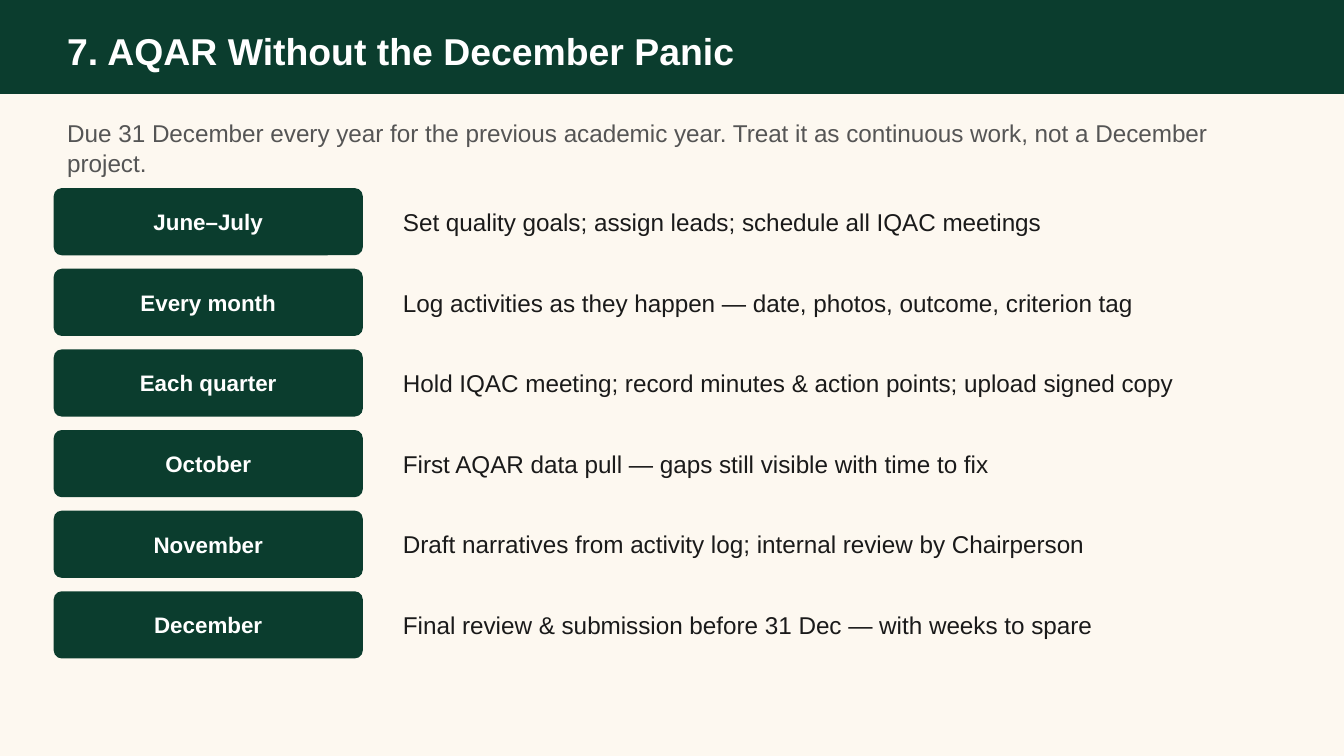
from dataclasses import dataclass

from lxml import etree
from pptx import Presentation
from pptx.dml.color import RGBColor
from pptx.enum.shapes import MSO_SHAPE
from pptx.enum.text import MSO_ANCHOR, MSO_AUTO_SIZE, PP_ALIGN
from pptx.oxml.ns import qn
from pptx.util import Inches, Pt

RECTANGLE = MSO_SHAPE.RECTANGLE
ROUNDED = MSO_SHAPE.ROUNDED_RECTANGLE
MIDDLE = MSO_ANCHOR.MIDDLE
NO_AUTOFIT = MSO_AUTO_SIZE.NONE
LEFT, CENTER = PP_ALIGN.LEFT, PP_ALIGN.CENTER

GRID = Inches(0.1)  # one column or row; the slide is 100 columns wide
TITLE_AND_CONTENT = 1


@dataclass(frozen=True)
class Theme:
    green: RGBColor = RGBColor.from_string("0B3D2E")
    cream: RGBColor = RGBColor.from_string("FDF8F0")
    white: RGBColor = RGBColor.from_string("FFFFFF")
    grey: RGBColor = RGBColor.from_string("555555")
    ink: RGBColor = RGBColor.from_string("1A1A1A")
    font: str = "Arial"
    title_size: int = 20
    body_size: int = 13
    label_size: int = 12


THEME = Theme()
TITLE_FORMAT = {"size": Pt(THEME.title_size), "bold": True, "color": THEME.white}
INTRO_FORMAT = {"size": Pt(THEME.body_size), "bold": False, "color": THEME.grey}
LABEL_FORMAT = {"size": Pt(THEME.label_size), "bold": True, "color": THEME.white}
TASK_FORMAT = {"size": Pt(THEME.body_size), "bold": False, "color": THEME.ink}

TITLE = "7. AQAR Without the December Panic"
INTRO = ("Due 31 December every year for the previous academic year. "
         "Treat it as continuous work, not a December project.")
CALENDAR = [
    ("June–July", "Set quality goals; assign leads; schedule all IQAC meetings"),
    ("Every month", "Log activities as they happen — date, photos, outcome, criterion tag"),
    ("Each quarter", "Hold IQAC meeting; record minutes & action points; upload signed copy"),
    ("October", "First AQAR data pull — gaps still visible with time to fix"),
    ("November", "Draft narratives from activity log; internal review by Chairperson"),
    ("December", "Final review & submission before 31 Dec — with weeks to spare"),
]


def on_grid(*cells):
    """Turn columns and rows into lengths."""
    return [int(cell * GRID) for cell in cells]


def write(shape, text, text_format, alignment=LEFT):
    """Put one formatted paragraph, vertically centred, in a shape."""
    frame = shape.text_frame
    frame.text = text
    frame_format = {"word_wrap": True, "auto_size": NO_AUTOFIT, "vertical_anchor": MIDDLE}
    for name, value in frame_format.items():
        setattr(frame, name, value)
    paragraph = frame.paragraphs[0]
    paragraph.alignment = alignment
    paragraph.space_before = Pt(0)
    font = paragraph.runs[0].font
    font.name = THEME.font
    font.color.rgb = text_format["color"]
    for name in ("size", "bold"):
        setattr(font, name, text_format[name])


def fill_placeholder(placeholder, box, text, text_format):
    """Move a template placeholder to its box and write in it."""
    sides = ("left", "top", "width", "height")
    for side, length in zip(sides, on_grid(*box)):
        setattr(placeholder, side, length)
    write(placeholder, text, text_format)


def add_panel(slide, preset, box):
    """Add a plain green shape."""
    panel = slide.shapes.add_shape(preset, *on_grid(*box))
    panel.shadow.inherit = False
    panel.fill.solid()
    panel.fill.fore_color.rgb = THEME.green
    panel.line.fill.background()
    return panel


def add_header(slide, box):
    """Green band with the slide title on it."""
    left, top, width, height = box
    band = add_panel(slide, RECTANGLE, box)
    slide.shapes.title.element.addprevious(band.element)  # behind the title
    title_box = (left + 4, top + 1.8, width - 10, height - 3)
    fill_placeholder(slide.shapes.title, title_box, TITLE, TITLE_FORMAT)


def add_intro(slide, box):
    """Unbulleted lead sentence in the body placeholder."""
    body = slide.placeholders[1]
    fill_placeholder(body, box, INTRO, INTRO_FORMAT)
    properties = body.text_frame.paragraphs[0]._p.get_or_add_pPr()
    properties.set("marL", "0")
    properties.set("indent", "0")
    etree.SubElement(properties, qn("a:buNone"))


def add_calendar(slide, box):
    """One row per period: a label pill and its task."""
    left, top, width, height = box
    pill_width, column_gap, row_gap = 23, 2, 1
    pitch = (height + row_gap) / len(CALENDAR)
    row_height = pitch - row_gap
    task_left = left + pill_width + column_gap
    task_width = width - pill_width - column_gap
    for row, (period, task) in enumerate(CALENDAR):
        row_top = top + row * pitch
        pill = add_panel(slide, ROUNDED, (left, row_top, pill_width, row_height))
        pill.adjustments[0] = 0.12
        write(pill, period, LABEL_FORMAT, CENTER)
        task_box = on_grid(task_left, row_top, task_width, row_height)
        write(slide.shapes.add_textbox(*task_box), task, TASK_FORMAT)


def main():
    presentation = Presentation()
    presentation.slide_width = 100 * GRID
    presentation.slide_height = presentation.slide_width * 9 // 16
    slide = presentation.slides.add_slide(presentation.slide_layouts[TITLE_AND_CONTENT])
    slide.background.fill.solid()
    slide.background.fill.fore_color.rgb = THEME.cream

    # Regions: left, top, width, height in grid cells
    add_header(slide, (0, 0, 100, 7))
    add_intro(slide, (4, 9, 92, 4))
    add_calendar(slide, (4, 14, 91, 35))
    presentation.save("out.pptx")


if __name__ == "__main__":
    main()
